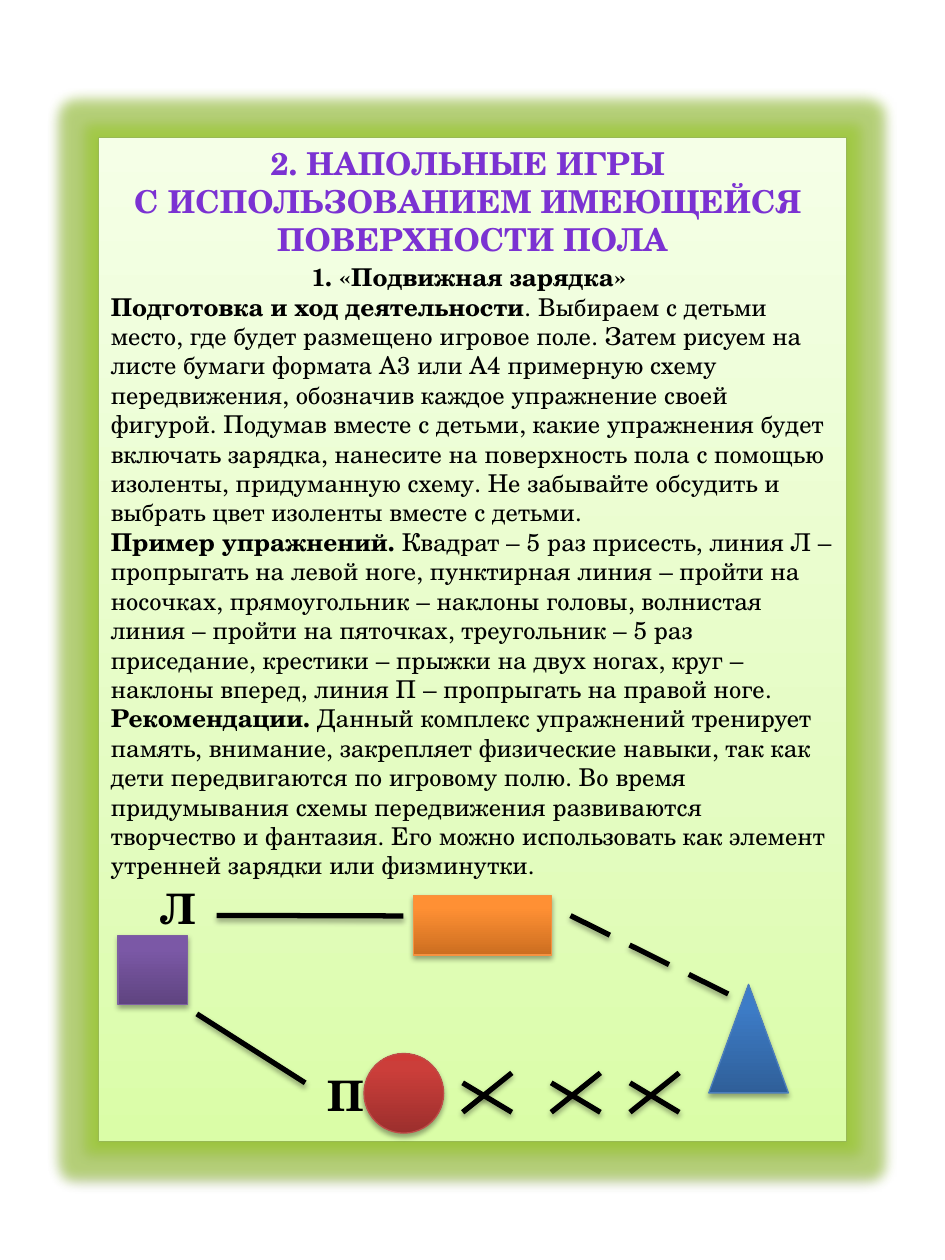
from lxml.etree import SubElement
from pptx import Presentation
from pptx.dml.color import RGBColor
from pptx.enum.shapes import MSO_CONNECTOR, MSO_SHAPE
from pptx.enum.text import MSO_ANCHOR, MSO_AUTO_SIZE, PP_ALIGN
from pptx.oxml import parse_xml
from pptx.oxml.ns import nsdecls, qn
from pptx.util import Pt

FONT = "TeX Gyre Schola"
rgb = RGBColor.from_string


def write(box, paragraphs, size=14, color="000000", centered=()):
    """Fill a box with paragraphs, each a list of (text, bold) runs."""
    frame = box.text_frame
    frame.word_wrap = True
    frame.auto_size = MSO_AUTO_SIZE.NONE
    frame.vertical_anchor = MSO_ANCHOR.TOP
    for number, runs in enumerate(paragraphs):
        paragraph = frame.add_paragraph() if number else frame.paragraphs[0]
        paragraph.alignment = PP_ALIGN.CENTER if number in centered else PP_ALIGN.LEFT
        for text, bold in runs:
            run = paragraph.add_run()
            run.text = text
            run.font.name, run.font.size, run.font.bold = FONT, Pt(size), bold
            run.font.color.rgb = rgb(color)


def paint(part, line, width=0.75, stops=(), alpha=35, distance=1.8, glow=""):
    """Set outline, bottom-to-top gradient and shadow of a shape or line."""
    part.line.color.rgb = rgb(line)
    part.line.width = Pt(width)
    properties = part._element.spPr
    if stops:
        part.fill.gradient()
        part.fill.gradient_angle = 90
        stop_list = properties.find(".//" + qn("a:gsLst"))
        for old_stop in list(stop_list):
            stop_list.remove(old_stop)
        for position, color in stops:
            stop = SubElement(stop_list, qn("a:gs"), pos=str(position * 1000))
            SubElement(stop, qn("a:srgbClr"), val=color)
    properties.append(parse_xml(
        f'<a:effectLst {nsdecls("a")}>{glow}'
        f'<a:outerShdw blurRad="{Pt(3.1)}" dist="{Pt(distance)}" dir="5400000" rotWithShape="0">'
        f'<a:srgbClr val="000000"><a:alpha val="{alpha * 1000}"/></a:srgbClr>'
        '</a:outerShdw></a:effectLst>'))


prs = Presentation()
prs.slide_width, prs.slide_height = Pt(540), Pt(720)
slide = prs.slides.add_slide(prs.slide_layouts[5])
shapes = slide.shapes

# Panel with a green glow
LEFT, TOP, WIDTH = 56.25, 78.75, 427.5
panel = shapes.add_shape(MSO_SHAPE.RECTANGLE, Pt(LEFT), Pt(TOP), Pt(WIDTH), Pt(573.75))
green_glow = (f'<a:glow rad="{Pt(14)}"><a:srgbClr val="9BD022">'
              '<a:alpha val="50000"/></a:srgbClr></a:glow>')
paint(panel, "98B955", stops=[(0, "DAFDA7"), (35, "E4FCC2"), (100, "F5FFE7")],
      alpha=38, distance=1.6, glow=green_glow)

# Title, moved in front of the panel
title = shapes.title
title.left, title.top, title.width, title.height = Pt(LEFT), Pt(TOP), Pt(WIDTH), Pt(72.7)
panel._element.addnext(title._element)
write(title, [[("2. НАПОЛЬНЫЕ ИГРЫ ", True)],
              [("С ИСПОЛЬЗОВАНИЕМ ИМЕЮЩЕЙСЯ ", True)],
              [("ПОВЕРХНОСТИ ПОЛА", True)]],
      size=18, color="7B32D2", centered=(0, 1, 2))

# Description of the game
description = shapes.add_textbox(Pt(LEFT), Pt(146.25), Pt(WIDTH), Pt(363.6))
write(description, [
    [("1. «Подвижная зарядка» ", True)],
    [("Подготовка и ход деятельности", True),
     (". Выбираем с детьми место, где будет размещено игровое поле. Затем рисуем на листе "
      "бумаги формата А3 или А4 примерную схему передвижения, обозначив каждое упражнение "
      "своей фигурой. Подумав вместе с детьми, какие упражнения будет включать зарядка, "
      "нанесите на поверхность пола с помощью изоленты, придуманную схему. Не забывайте "
      "обсудить и выбрать цвет изоленты вместе с детьми.", False)],
    [("Пример упражнений. ", True),
     ("Квадрат – 5 раз присесть, линия Л – пропрыгать на левой ноге, пунктирная линия – "
      "пройти на носочках, прямоугольник – наклоны головы, волнистая линия – пройти на "
      "пяточках, треугольник – 5 раз приседание, крестики – прыжки на двух ногах, круг – "
      "наклоны вперед, линия П – пропрыгать на правой ноге. ", False),
     ("Рекомендации. ", True),
     ("Данный комплекс упражнений тренирует память, внимание, закрепляет физические навыки, "
      "так как дети передвигаются по игровому полю. Во время придумывания схемы передвижения "
      "развиваются творчество и фантазия. Его можно использовать как элемент утренней зарядки "
      "или физминутки.", False)],
], centered=(0,))

# Figures of the route: kind, place, outline, gradient from bottom to top
figures = [
    (MSO_SHAPE.FLOWCHART_CONNECTOR, (208, 602, 45.5, 45.5), "BF4C48",
     ("9C2F2D", "CB3E3A", "CE3B37")),
    (MSO_SHAPE.RECTANGLE, (67.5, 534.4, 39.6, 39.6), "7D60A0", ("5F4480", "7B58A6", "7C57A8")),
    (MSO_SHAPE.RECTANGLE, (236.2, 511.9, 78.8, 33.8), "F69240", ("CC6E20", "FF9034", "FF9136")),
    (MSO_SHAPE.ISOSCELES_TRIANGLE, (405, 562.5, 45.5, 62), "4B7EBC",
     ("2F5F99", "3D7CC7", "3A7CCB")),
]
for kind, place, outline, colors in figures:
    figure = shapes.add_shape(kind, *map(Pt, place))
    paint(figure, outline, stops=list(zip((0, 80, 100), colors)))

for letter, left, top in [("П", 180, 607.5), ("Л", 84.4, 500.6)]:
    write(shapes.add_textbox(Pt(left), Pt(top), Pt(22.5), Pt(36)), [[(letter, True)]], size=24)

# Straight lines, dashes and crosses between the figures
strokes = [(174.4, 618.8, 112.5, 579.4), (230.5, 523.4, 123.8, 523.1)]
for step in range(3):
    x, y = 326 + 33.8 * step, 523.2 + 16.8 * step
    strokes.append((x, y, x + 22.5, y + 11.2))
for x in (264.4, 315, 360):
    strokes += [(x, 618.8, x + 28.1, 635.6), (x, 635.6, x + 28.1, 613.1)]
for stroke in strokes:
    paint(shapes.add_connector(MSO_CONNECTOR.STRAIGHT, *map(Pt, stroke)), "000000", width=3)

prs.save("out.pptx")
